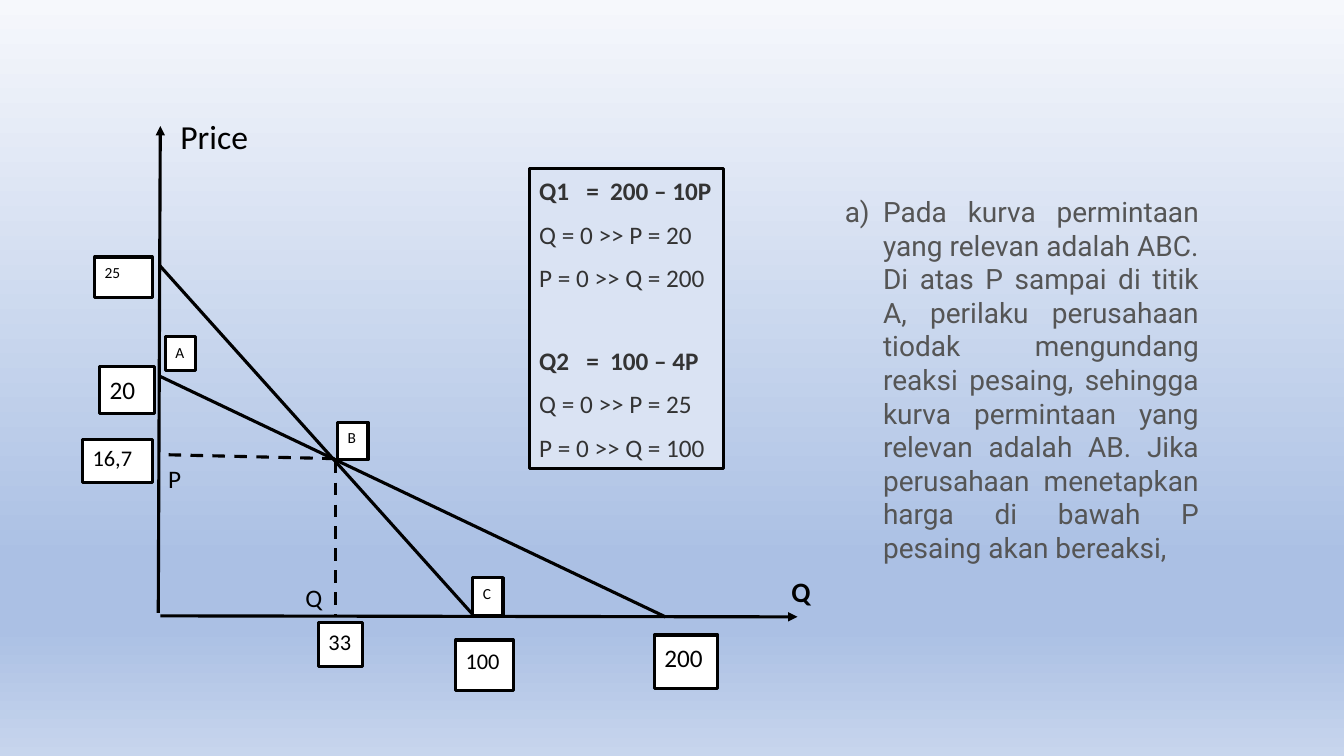
import pptx
import pptx.util
import pptx.dml.color
import pptx.enum.dml
import pptx.enum.shapes
import pptx.enum.text
import pptx.oxml
import pptx.oxml.ns
from lxml import etree

# ---- Content (lengths in inches, sizes in points) ----
GRADIENT = [(0, "F6F8FC"), (74, "ABC0E4"), (83, "ABC0E4"), (100, "C7D5ED")]

POINTS = {
    "axis foot": (1.57, 6.08), "price end": (1.59, 1.25),
    "origin": (1.59, 6.11), "quantity end": (7.91, 6.12),
    "P=25": (1.58, 2.63), "Q=100": (4.71, 6.12),
    "P=20": (1.58, 3.73), "Q=200": (6.6, 6.12),
    "B left": (3.32, 4.55), "P=16.7": (1.59, 4.51),
    "B below": (3.33, 4.57), "Q=33": (3.33, 6.12),
}
LINES = [
    ("axis foot", "price end", "arrow"), ("origin", "quantity end", "arrow"),
    ("P=25", "Q=100", ""), ("P=20", "Q=200", ""),
    ("B left", "P=16.7", "dash"), ("B below", "Q=33", "dash"),
]

SPACED = {"line_spacing": 1.07, "space_after": pptx.util.Pt(8)}
# text, size, box, paragraph format
VALUE_BOXES = [
    ("25", 11, (0.94, 2.55, 0.57, 0.4), SPACED),
    ("20", 18, (0.99, 3.64, 0.54, 0.46), SPACED),
    ("100", 16, (4.52, 6.35, 0.57, 0.5), SPACED),
    ("200", 18, (6.49, 6.3, 0.63, 0.53), SPACED),
    ("A", 11, (1.64, 3.34, 0.3, 0.34), SPACED),
    ("B", 11, (3.35, 4.19, 0.3, 0.37), SPACED),
    ("C", 11, (4.69, 5.73, 0.3, 0.38), SPACED),
    ("16,7", 16, (0.82, 4.36, 0.69, 0.43), {}),
    ("33", 16, (3.16, 6.18, 0.44, 0.43), {}),
]
EQUATION_BOX = (5.25, 1.67, 1.93, 2.98)
EQUATIONS = [
    ["Q1\u00a0\u00a0 =\u00a0 200 – 10P", "Q = 0 >> P = 20", "P = 0 >> Q = 200"],
    ["Q2\u00a0\u00a0 =\u00a0 100 – 4P", "Q = 0 >> P = 25", "P = 0 >> Q = 100"],
]
# text, size, bold, box, wrap
LABELS = [
    ("P", 18, False, (1.57, 4.55, 0.28, 0.4), True),
    ("Q", 18, False, (2.93, 5.73, 0.3, 0.4), True),
    ("Price", 24, False, (1.69, 1.1, 1.39, 0.5), True),
    ("Q", 20, True, (7.75, 5.65, 0.39, 0.44), False),
]
EXPLANATION_BOX = (8.28, 1.88, 3.71, 4.14)
EXPLANATION = (
    "Pada kurva permintaan yang relevan adalah ABC. Di atas P sampai di titik A, "
    "perilaku perusahaan tiodak mengundang reaksi pesaing, sehingga kurva "
    "permintaan yang relevan adalah AB. Jika perusahaan menetapkan harga di bawah "
    "P pesaing akan bereaksi, ")


# ---- Helpers ----
def rgb(value):
    return pptx.dml.color.RGBColor.from_string(value)


def inches(values):
    return [pptx.util.Inches(v) for v in values]


def add_xml(parent, tag, **attrs):
    el = etree.SubElement(parent, pptx.oxml.ns.qn("a:" + tag))
    for name, value in attrs.items():
        el.set(name, str(value))
    return el


def set_line(line):
    line.color.rgb = rgb("000000")
    line.width = pptx.util.Pt(2.25)


def write(p, text, size, color="000000", bold=False, font="Calibri", fmt=None):
    formats = {"alignment": pptx.enum.text.PP_ALIGN.LEFT, **(fmt or {})}
    for name, value in formats.items():
        setattr(p, name, value)
    r = p.add_run()
    r.text = text
    for name, value in {"size": pptx.util.Pt(size), "bold": bold, "name": font}.items():
        setattr(r.font, name, value)
    r.font.color.rgb = rgb(color)


def add_box(box, fill):
    sp = s.shapes.add_shape(pptx.enum.shapes.MSO_SHAPE.RECTANGLE, *inches(box))
    sp.shadow.inherit = False
    sp.fill.solid()
    sp.fill.fore_color.rgb = rgb(fill)
    set_line(sp.line)
    return top_frame(sp)


def add_label(box, wrap=True):
    return top_frame(s.shapes.add_textbox(*inches(box)), wrap)


def top_frame(sp, wrap=True):
    tf = sp.text_frame
    tf.word_wrap = wrap
    tf.vertical_anchor = pptx.enum.text.MSO_ANCHOR.TOP
    return tf


# ---- Slide and background ----
prs = pptx.Presentation()
prs.slide_width, prs.slide_height = inches((13.33, 7.5))
s = prs.slides.add_slide(prs.slide_layouts[6])

s.background.fill.gradient()
grad = next(s.element.iter(pptx.oxml.ns.qn("a:gradFill")))
for child in list(grad):
    grad.remove(child)
stops = add_xml(grad, "gsLst")
for share, color in GRADIENT:
    add_xml(add_xml(stops, "gs", pos=share * 1000), "srgbClr", val=color)
add_xml(grad, "lin", ang=90 * 60000, scaled=0)

# ---- Axes, demand curves and guides ----
for start, end, style in LINES:
    line = s.shapes.add_connector(pptx.enum.shapes.MSO_CONNECTOR.STRAIGHT,
                                  *inches(POINTS[start] + POINTS[end]))
    set_line(line.line)
    if style == "dash":
        line.line.dash_style = pptx.enum.dml.MSO_LINE.DASH
    if style == "arrow":
        add_xml(line.line._get_or_add_ln(), "tailEnd", type="triangle")
    add_xml(line._element.spPr, "effectLst")

# ---- Value boxes ----
for text, size, box, fmt in VALUE_BOXES:
    write(add_box(box, "FFFFFF").paragraphs[0], text, size, fmt=fmt)

# ---- Equations: bold heading per group, gap before the second group ----
tf = add_box(EQUATION_BOX, "DAE3F3")
for g, group in enumerate(EQUATIONS):
    for i, text in enumerate(group):
        p = tf.add_paragraph() if g or i else tf.paragraphs[0]
        gap = pptx.util.Pt(28 if g and not i else 0)
        write(p, text, 18, "333333", bold=not i, fmt={**SPACED, "space_before": gap})

# ---- Explanation ----
p = add_label(EXPLANATION_BOX).paragraphs[0]
write(p, EXPLANATION, 20, "555555", font="Roboto",
      fmt={"alignment": pptx.enum.text.PP_ALIGN.JUSTIFY})
pPr = p._p.get_or_add_pPr()
indent = pptx.util.Inches(0.38)
pPr.set("marL", str(indent))
pPr.set("indent", str(-indent))
add_xml(pPr, "buAutoNum", type="alphaLcParenR")

# ---- Axis labels ----
for text, size, bold, box, wrap in LABELS:
    write(add_label(box, wrap).paragraphs[0], text, size, bold=bold)

prs.save("out.pptx")
